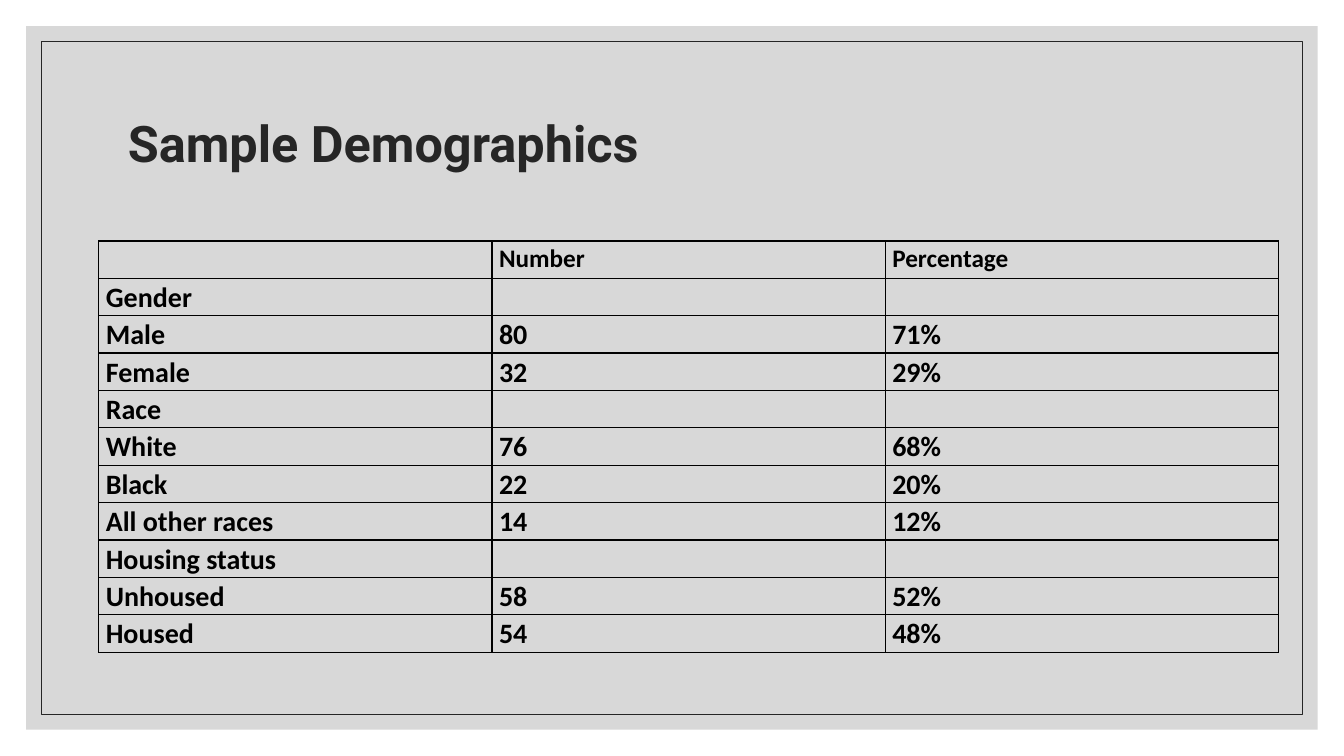
from lxml import etree
from pptx import Presentation, util as u
from pptx.dml.color import RGBColor
from pptx.enum import shapes, text
from pptx.oxml import ns

WIDE, HIGH = 13.33, 7.5
GREY = RGBColor(0xBF, 0xBF, 0xBF)
DARK = RGBColor(0x26, 0x26, 0x26)
BLACK = RGBColor(0, 0, 0)

HEAD = ("", "Number", "Percentage")
ROWS = [
    ("Gender", "", ""),
    ("Male", "80", "71%"),
    ("Female", "32", "29%"),
    ("Race", "", ""),
    ("White", "76", "68%"),
    ("Black", "22", "20%"),
    ("All other races", "14", "12%"),
    ("Housing status", "", ""),
    ("Unhoused", "58", "52%"),
    ("Housed", "54", "48%"),
]


def inches(box):
    return [u.Inches(side) for side in box]


def inset(box, gap):
    left, top, width, height = box
    return left + gap, top + gap, width - 2 * gap, height - 2 * gap


def write(par, words, size, face, color, lead):
    par.line_spacing = lead
    run = par.add_run()
    run.text = words
    run.font.size = u.Pt(size)
    run.font.name = face
    run.font.bold = True
    run.font.color.rgb = color


def add_rect(slide, box):
    rect = slide.shapes.add_shape(shapes.MSO_SHAPE.RECTANGLE, *inches(box))
    rect.shadow.inherit = False
    return rect


def add_frame(slide, box):
    # Translucent grey panel
    panel = add_rect(slide, box)
    panel.fill.solid()
    panel.fill.fore_color.rgb = GREY
    panel.line.fill.background()
    tint = panel.fill._xPr.find(".//" + ns.qn("a:srgbClr"))
    etree.SubElement(tint, ns.qn("a:alpha"), val="60000")

    # Thin outline inside the panel
    rim = add_rect(slide, inset(box, 0.15))
    rim.fill.background()
    rim.line.color.rgb = DARK
    rim.line.width = u.Pt(0.5)


def add_title(slide, box, words):
    frame = slide.shapes.add_textbox(*inches(box)).text_frame
    frame.word_wrap = True
    frame.vertical_anchor = text.MSO_ANCHOR.MIDDLE
    write(frame.paragraphs[0], words, 36, "Roboto", DARK, 0.9)


def add_edges(cell):
    props = cell._tc.get_or_add_tcPr()
    for side in "LRTB":
        line = etree.SubElement(props, ns.qn("a:ln" + side), w=str(u.Pt(1)))
        fill = etree.SubElement(line, ns.qn("a:solidFill"))
        etree.SubElement(fill, ns.qn("a:srgbClr"), val=str(BLACK))


def add_grid(slide, box, rows):
    count, span = len(rows), len(rows[0])
    table = slide.shapes.add_table(count, span, *inches(box)).table
    table.first_row = table.horz_banding = False
    for col in table.columns:
        col.width = u.Inches(box[2] / span)
    for r, row in enumerate(rows):
        table.rows[r].height = u.Inches(box[3] / count)
        for c, words in enumerate(row):
            cell = table.cell(r, c)
            cell.margin_left = cell.margin_right = u.Inches(0.07)
            cell.margin_top = cell.margin_bottom = 0
            add_edges(cell)
            cell.fill.background()
            if words:
                size = 20 if r else 18
                write(cell.text_frame.paragraphs[0], words, size,
                      "Calibri", BLACK, 1.07)


def main():
    deck = Presentation()
    deck.slide_width, deck.slide_height = u.Inches(WIDE), u.Inches(HIGH)
    slide = deck.slides.add_slide(deck.slide_layouts[6])
    add_frame(slide, inset((0, 0, WIDE, HIGH), 0.26))
    add_title(slide, (1.17, 0.7, 11, 1.5), "Sample Demographics")
    add_grid(slide, (0.98, 2.39, 11.7, 4.08), [HEAD] + ROWS)
    deck.save("out.pptx")


if __name__ == "__main__":
    main()
